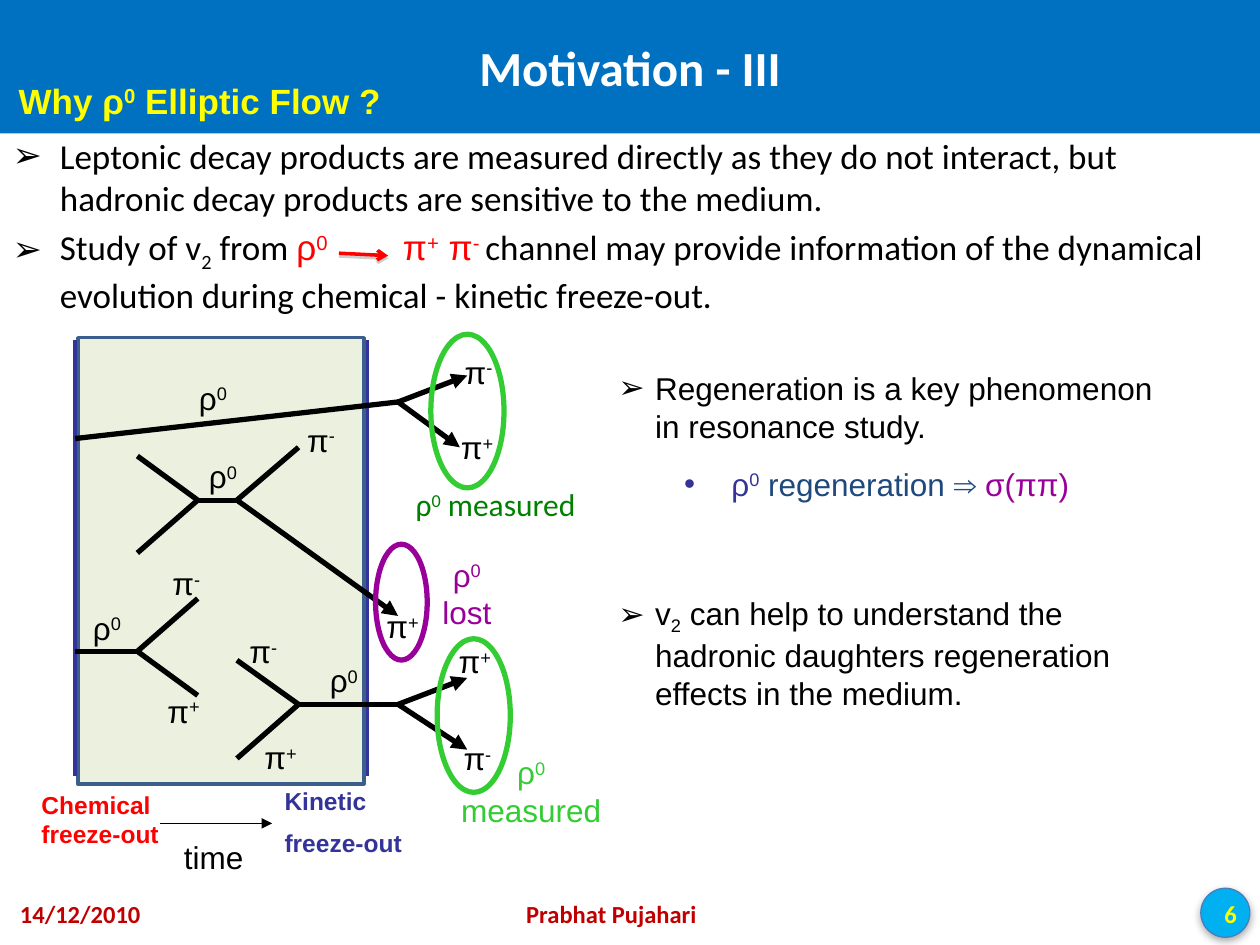
from lxml import etree
from pptx import Presentation
from pptx.dml.color import RGBColor
from pptx.enum.shapes import MSO_CONNECTOR, MSO_SHAPE
from pptx.enum.text import MSO_ANCHOR, MSO_AUTO_SIZE, PP_ALIGN
from pptx.oxml.ns import qn
from pptx.util import Pt

BLACK = RGBColor(0, 0, 0)
WHITE = RGBColor(0xFF, 0xFF, 0xFF)
BAND_BLUE = RGBColor(0x00, 0x70, 0xC0)
BADGE_BLUE = RGBColor(0x00, 0xB0, 0xF0)
BADGE_EDGE = RGBColor(0x4A, 0x7E, 0xBB)
YELLOW = RGBColor(0xFF, 0xFF, 0x00)
RED = RGBColor(0xFF, 0, 0)
DARK_RED = RGBColor(0xC0, 0, 0)
MEDIUM_FILL = RGBColor(0xEB, 0xF1, 0xDE)
MEDIUM_EDGE = RGBColor(0x3A, 0x5F, 0x8C)
INDIGO = RGBColor(0x33, 0x33, 0x99)
NAVY = RGBColor(0x1F, 0x49, 0x7D)
PURPLE = RGBColor(0x99, 0, 0x99)
GREEN = RGBColor(0x33, 0xCC, 0x33)
DARK_GREEN = RGBColor(0, 0x80, 0)


def style(para, size, color, font="Arial", bold=False, align=None):
    para.font.size, para.font.name, para.font.bold = Pt(size), font, bold
    para.font.color.rgb = color
    para.alignment = align


def rich(para, text, color=None, font=None):
    """Add spans parted by |; a leading ^ raises a span and _ lowers it."""
    for part in text.split("|"):
        span = para.add_run()
        span.text = part.lstrip("^_")
        if part[0] in "^_":
            span.font._element.set("baseline", "30000" if part[0] == "^" else "-25000")
        if color is not None:
            span.font.color.rgb = color
        if font:
            span.font.name = font


def bullet(para, mark, indent):
    props = para._p.get_or_add_pPr()
    props.set("marL", str(Pt(indent)))
    props.set("indent", str(-Pt(indent)))
    etree.SubElement(props, qn("a:buFont")).set("typeface", "Arial")
    etree.SubElement(props, qn("a:buChar")).set("char", mark)


def text_box(shapes, box, text, size, color, font="Arial", bold=False, align=None,
             wrap=True, anchor=MSO_ANCHOR.TOP):
    shape = shapes.add_textbox(*map(Pt, box))
    frame = shape.text_frame
    frame.word_wrap, frame.vertical_anchor = wrap, anchor
    para = frame.paragraphs[0]
    style(para, size, color, font, bold, align)
    if text:
        rich(para, text)
    return shape


def outline(shapes, kind, box, color, width, fill=None):
    shape = shapes.add_shape(kind, *map(Pt, box))
    shape.shadow.inherit = False
    shape.line.color.rgb, shape.line.width = color, Pt(width)
    if fill is None:
        shape.fill.background()
    else:
        shape.fill.solid()
        shape.fill.fore_color.rgb = fill
    return shape


def line(shapes, start, end, color=BLACK, width=3, head=None):
    link = shapes.add_connector(MSO_CONNECTOR.STRAIGHT, *map(Pt, (*start, *end)))
    link.line.color.rgb, link.line.width = color, Pt(width)
    if head:
        etree.SubElement(link.line._get_or_add_ln(), qn("a:tailEnd")).set("type", head)
    etree.SubElement(link._element.spPr, qn("a:effectLst"))
    return link


def drop_shadow(shape, color, alpha, blur, distance):
    effects = shape._element.spPr.find(qn("a:effectLst"))
    shadow = etree.SubElement(effects, qn("a:outerShdw"), blurRad=str(Pt(blur)),
                              dist=str(Pt(distance)), dir="5400000", rotWithShape="0")
    tint = etree.SubElement(shadow, qn("a:srgbClr"), val=color)
    etree.SubElement(tint, qn("a:alpha"), val=str(alpha * 1000))


def header(page, left, top, width, height):
    title = page.shapes.title
    title.left, title.top, title.width, title.height = map(Pt, (left, top, width, height))
    title.fill.solid()
    title.fill.fore_color.rgb = BAND_BLUE
    title.text_frame.text = "Motivation - III"
    title.text_frame.vertical_anchor = MSO_ANCHOR.MIDDLE
    style(title.text_frame.paragraphs[0], 28, WHITE, "Calibri", True, PP_ALIGN.CENTER)
    text_box(page.shapes, (left + 3.6, top + 41.8, 224, 31.7),
             "Why ρ|^0| Elliptic Flow ?", 20, YELLOW, bold=True, wrap=False)


def decay_points(page, left, top, width, height):
    body = page.placeholders[1]
    body.left, body.top, body.width, body.height = map(Pt, (left, top, width, height))
    frame = body.text_frame
    frame.auto_size = MSO_AUTO_SIZE.NONE
    first, second = frame.paragraphs[0], frame.add_paragraph()
    for para in (first, second):
        style(para, 20, BLACK, "Calibri")
        para.space_before = Pt(4)
        bullet(para, "➢", 27)
    rich(first, "Leptonic decay products are measured directly as they do not interact, "
                "but hadronic decay products are sensitive to the medium.")
    # The tab leaves room for the decay arrow
    tabs = etree.SubElement(second._p.get_or_add_pPr(), qn("a:tabLst"))
    etree.SubElement(tabs, qn("a:tab"), pos=str(Pt(223)), algn="l")
    rich(second, "Study of v|_2| from ")
    rich(second, "ρ|^0|\tπ|^+| π|^- ", RED, "Arial")
    rich(second, "channel may provide information of the dynamical evolution "
                 "during chemical - kinetic freeze-out.")
    arrow = line(page.shapes, (left + 193.7, top + 71.3), (left + 221.8, top + 72.7),
                 RED, 2, "arrow")
    drop_shadow(arrow, "808080", 38, 0, 1.6)


def decay_diagram(page, left, top):
    def at(x, y, *size):
        return (left + x, top + y, *size)

    def tracks(shapes, *ends):
        for x1, y1, x2, y2, head in ends:
            line(shapes, at(x1, y1), at(x2, y2), head=head)

    def labels(shapes, text, *corners):
        for x, y in corners:
            text_box(shapes, at(x, y, 38.5, 28), text, 18, BLACK, wrap=False)

    def ring(shapes, box, color):
        outline(shapes, MSO_SHAPE.OVAL, at(*box), color, 3)

    # Medium between the two freeze-outs
    shapes = page.shapes
    outline(shapes, MSO_SHAPE.RECTANGLE, at(1.6, 2, 163.4, 255), MEDIUM_EDGE, 2, MEDIUM_FILL)
    for x in (0, 167):
        line(shapes, at(x, 3.4), at(x, 252.5), INDIGO, 2.25)
    tip = "triangle"

    # Decay outside the medium
    tracks(shapes, (0, 59.6, 184.5, 38.7, None), (184.5, 38.7, 219.8, 64.6, tip),
           (184.5, 38.7, 224, 23.6, tip))
    ring(shapes, (203.2, 0, 41.8, 87.8), GREEN)
    labels(shapes, "ρ|^0", (63.6, 22))
    labels(shapes, "π|^-", (215.5, 7))
    labels(shapes, "π|^+", (213.3, 50.2))
    text_box(shapes, at(187.4, 82.6, 111, 28), "ρ|^0| measured", 18, DARK_GREEN,
             "Calibri", wrap=False)

    # Decays inside the medium
    lost = page.shapes.add_group_shape().shapes
    tracks(lost, (70, 94.8, 92.4, 94.8, None), (35.5, 125, 70, 94.8, None),
           (92.4, 94.8, 184.5, 161, tip), (92.4, 94.8, 127.6, 64.6, None),
           (70, 94.8, 35.5, 69.6, None), (0, 181.2, 35.5, 181.2, None),
           (35.5, 181.2, 70, 151, None), (70, 206.4, 35.5, 181.2, None))
    ring(lost, (171.6, 120, 29.5, 66.2), PURPLE)
    labels(lost, "ρ|^0", (3, 153.2), (69.3, 66.8))
    labels(lost, "π|^-", (48.4, 128), (125.5, 45.9))
    labels(lost, "π|^+", (45.6, 200.7), (170.8, 152.4))
    text_box(lost, at(197.5, 123, 52.6, 49), "ρ|^0| lost", 18, PURPLE, align=PP_ALIGN.CENTER)

    # Regeneration
    regenerated = page.shapes.add_group_shape().shapes
    tracks(regenerated, (127.6, 211.5, 92.4, 186.3, None), (92.4, 242.4, 127.6, 211.5, None),
           (127.6, 211.5, 184.5, 211.5, None), (184.5, 211.5, 224, 196.4, tip),
           (184.5, 211.5, 224, 237.4, tip))
    ring(regenerated, (206.8, 174, 41.8, 87.8), GREEN)
    labels(regenerated, "ρ|^0", (138.4, 183.4))
    labels(regenerated, "π|^-", (92.4, 166.8), (214.8, 228))
    labels(regenerated, "π|^+", (212, 172.6), (101, 227.3))
    text_box(regenerated, at(204.7, 236, 111.6, 49), "ρ|^0| measured", 18, GREEN,
             align=PP_ALIGN.CENTER)

    # Time axis
    text_box(shapes, at(-26.4, 256.8, 113.8, 41), "Chemical freeze-out", 14, RED, bold=True)
    kinetic = text_box(shapes, at(112.5, 254.7, 113.8, 49.7), "Kinetic", 14, INDIGO, bold=True)
    para = kinetic.text_frame.add_paragraph()
    style(para, 14, INDIGO, bold=True)
    para.space_before = Pt(7)
    rich(para, "freeze-out")
    axis = line(shapes, at(48.4, 279.55), at(112.5, 279.55), width=0.75, head=tip)
    axis.end_connect(kinetic, 1)
    text_box(shapes, at(55, 284.2, 49, 28), "time", 18, BLACK, wrap=False)


def regeneration_notes(page, left, top, width, height):
    notes = text_box(page.shapes, (left, top, width, height), "", 18, BLACK).text_frame
    first, second = notes.paragraphs[0], notes.add_paragraph()
    style(second, 18, BLACK)
    second.space_before = Pt(85)
    for para in (first, second):
        bullet(para, "➢", 21)
    rich(first, "Regeneration is a key phenomenon")
    first.add_line_break()
    rich(first, "in resonance study.")
    rich(second, "v|_2| can help to understand the")
    for text in ("hadronic daughters regeneration", "effects in the medium."):
        second.add_line_break()
        rich(second, text)
    detail = text_box(page.shapes, (left + 37.5, top + 54.7, 264, 55), "ρ|^0", 18, INDIGO)
    para = detail.text_frame.paragraphs[0]
    bullet(para, "•", 27)
    rich(para, " regeneration ⇒ ", NAVY)
    rich(para, "σ(ππ)", PURPLE)


def footer(page, left, top, width, height):
    badge = outline(page.shapes, MSO_SHAPE.OVAL, (left + width - 33.8, top, 28, 28),
                    BADGE_EDGE, 0.75, BADGE_BLUE)
    drop_shadow(badge, "000000", 35, 5, 1.8)
    for x, span, text, color, align in (
            (4.3, 168, "14/12/2010", DARK_RED, PP_ALIGN.LEFT),
            (235.4, 228, "Prabhat Pujahari", DARK_RED, PP_ALIGN.CENTER),
            (545.8, 168, "6", YELLOW, PP_ALIGN.RIGHT)):
        text_box(page.shapes, (left + x, top, span, height), text, 14, color, "Calibri",
                 True, align, anchor=MSO_ANCHOR.MIDDLE)


def main():
    deck = Presentation()
    deck.slide_width, deck.slide_height = Pt(720), Pt(540)
    page = deck.slides.add_slide(deck.slide_layouts[1])
    header(page, 0, 0, 720, 76.3)
    decay_points(page, 0, 73.4, 714, 92)
    decay_diagram(page, 43, 191)
    regeneration_notes(page, 346.3, 207.4, 331, 204)
    footer(page, 0, 507.6, 720, 28.8)
    deck.save("out.pptx")


if __name__ == "__main__":
    main()
